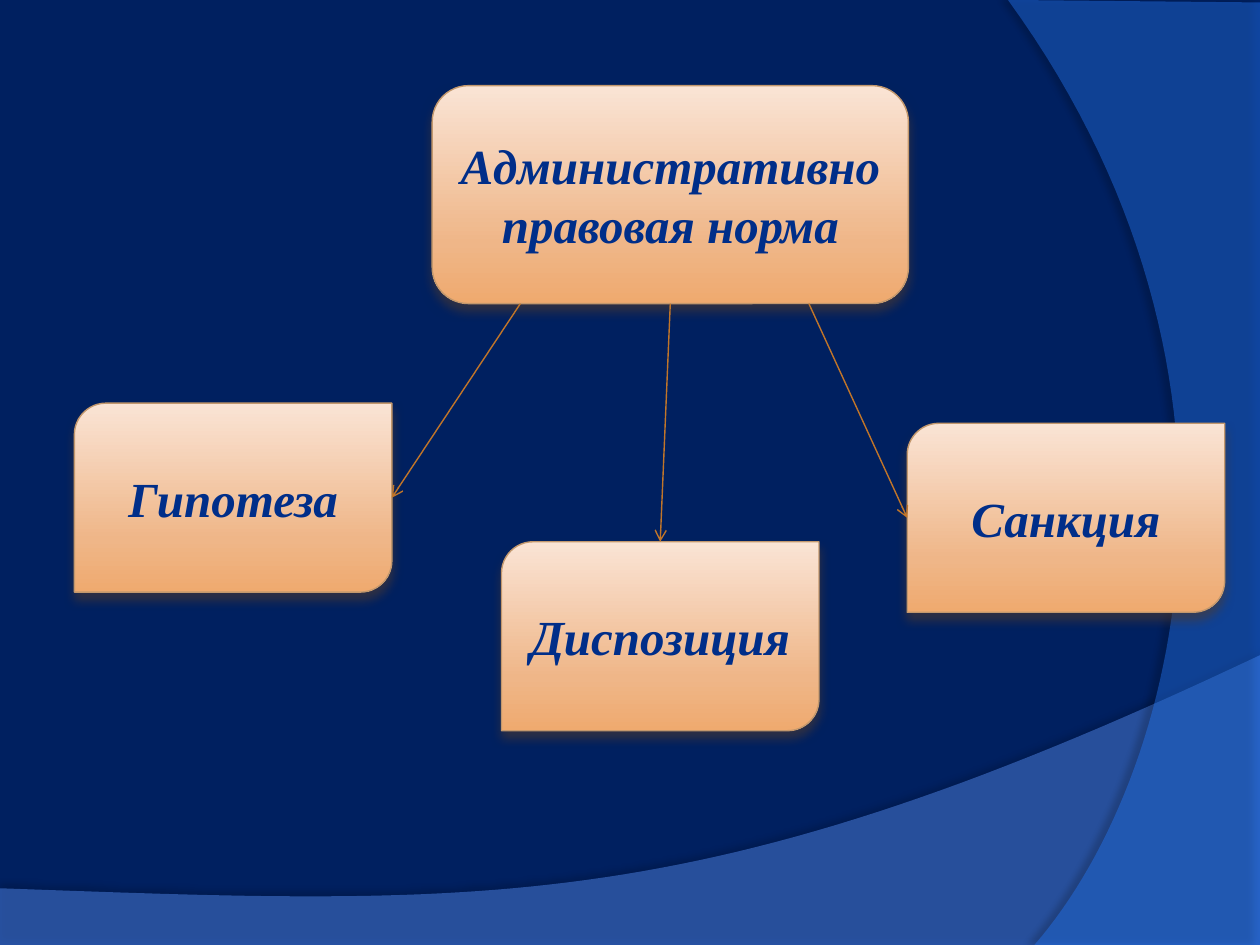
from lxml.etree import SubElement
from pptx import Presentation
from pptx.dml.color import RGBColor
from pptx.enum.shapes import MSO_CONNECTOR, MSO_SHAPE
from pptx.enum.text import MSO_ANCHOR, PP_ALIGN
from pptx.oxml.ns import qn
from pptx.util import Inches, Pt

NAVY = RGBColor(0x00, 0x20, 0x60)
LIGHT_WAVE = RGBColor(0x57, 0x90, 0xF7)
BRIGHT_WAVE = RGBColor(0x26, 0x7D, 0xFF)
TEXT_BLUE = RGBColor(0x00, 0x2E, 0x89)
BOX_LINE = RGBColor(0xC3, 0x98, 0x6D)
ARROW = RGBColor(0xC1, 0x75, 0x29)
BROWN = RGBColor(0x4E, 0x3B, 0x30)
BLACK = RGBColor(0x00, 0x00, 0x00)
BOX_STOPS = (
    (0, RGBColor(0xFA, 0xE4, 0xD5)),
    (72, RGBColor(0xEF, 0xB6, 0x88)),
    (100, RGBColor(0xEF, 0xAA, 0x6F)),
)
FONT = "Times New Roman"
LINE_WIDTH = Pt(0.79)
DIAG_SITES = {"right": 0, "left": 2, "top": 3}


def add_color(parent, color, alpha=None):
    clr = SubElement(parent, qn("a:srgbClr"), val=str(color))
    if alpha is not None:
        SubElement(clr, qn("a:alpha"), val=str(alpha * 1000))


def add_shadow(sp, color, alpha, blur, dist, angle):
    sp.shadow.inherit = False
    effects = sp._element.spPr.find(qn("a:effectLst"))
    shadow = SubElement(effects, qn("a:outerShdw"), blurRad=str(Pt(blur)),
                        dist=str(Pt(dist)), dir=str(angle * 60000), rotWithShape="0")
    add_color(shadow, color, alpha)


def fill_gradient(sp):
    sp.fill.gradient()
    sp.fill.gradient_angle = 270
    stops = sp._element.spPr.find(qn("a:gradFill")).find(qn("a:gsLst"))
    for stop in list(stops):
        stops.remove(stop)
    for pos, color in BOX_STOPS:
        add_color(SubElement(stops, qn("a:gs"), pos=str(pos * 1000)), color)


def curve(p0, p1, p2, p3, steps=60):
    points = []
    for i in range(steps + 1):
        t = i / steps
        u = 1 - t
        weights = (u ** 3, 3 * u * u * t, 3 * u * t * t, t ** 3)
        points.append(tuple(sum(w * p[axis] for w, p in zip(weights, (p0, p1, p2, p3)))
                            for axis in (0, 1)))
    return points


def add_wave(slide, points, color, alpha, shadow):
    points = [(Inches(x), Inches(y)) for x, y in points]
    builder = slide.shapes.build_freeform(*points[0])
    builder.add_line_segments(points[1:], close=True)
    sp = builder.convert_to_shape()
    sp.fill.solid()
    sp.fill.fore_color.rgb = color
    clr = sp._element.spPr.find(qn("a:solidFill"))[0]
    SubElement(clr, qn("a:alpha"), val=str(alpha * 1000))
    sp.line.fill.background()
    add_shadow(sp, BLACK, *shadow)


def add_background(slide):
    slide.background.fill.solid()
    slide.background.fill.fore_color.rgb = NAVY
    bottom = [(0, 7.51), (10, 7.51)]
    bottom += curve((10, 5.2), (5.59, 7.29), (3.91, 7.19), (0, 7.05))
    add_wave(slide, bottom, LIGHT_WAVE, 45, (35, 4, 3.5, 270))
    side = [(10, 0.02), (10, 7.5)]
    side += curve((8.21, 7.5), (9.35, 6.19), (10.18, 3), (8, 0))
    add_wave(slide, side, BRIGHT_WAVE, 40, (45, 4, 4, 180))


def add_box(slide, kind, text, left, top, width, height):
    sp = slide.shapes.add_shape(kind, Inches(left), Inches(top), Inches(width), Inches(height))
    fill_gradient(sp)
    sp.line.color.rgb = BOX_LINE
    sp.line.width = LINE_WIDTH
    add_shadow(sp, BROWN, 60, 6, 4, 90)
    tf = sp.text_frame
    tf.word_wrap = True
    tf.vertical_anchor = MSO_ANCHOR.MIDDLE
    p = tf.paragraphs[0]
    p.text = text
    p.alignment = PP_ALIGN.CENTER
    p.font.name = FONT
    p.font.size = Pt(28)
    p.font.bold = True
    p.font.italic = True
    p.font.color.rgb = TEXT_BLUE
    return sp


def add_arrow(slide, norm, start_x, part, side):
    end_x = part.left + {"left": 0, "top": part.width // 2, "right": part.width}[side]
    end_y = part.top + (0 if side == "top" else part.height // 2)
    line = slide.shapes.add_connector(MSO_CONNECTOR.STRAIGHT, start_x,
                                      norm.top + norm.height, end_x, end_y)
    if start_x == norm.left + norm.width // 2:
        line.begin_connect(norm, 2)
    line.end_connect(part, DIAG_SITES[side])
    line.end_x, line.end_y = end_x, end_y
    line.line.color.rgb = ARROW
    line.line.width = LINE_WIDTH
    SubElement(line.line._get_or_add_ln(), qn("a:tailEnd"), type="arrow")
    SubElement(line._element.spPr, qn("a:effectLst"))


def add_diagram(slide):
    norm = add_box(slide, MSO_SHAPE.ROUNDED_RECTANGLE, "Административно правовая норма",
                   3.43, 0.68, 3.78, 1.73)
    parts = (
        ("Гипотеза", 0.59, 3.2, Inches(4.13), "right"),
        ("Диспозиция", 3.98, 4.3, norm.left + norm.width // 2, "top"),
        ("Санкция", 7.2, 3.36, Inches(6.42), "left"),
    )
    for text, left, top, start_x, side in parts:
        part = add_box(slide, MSO_SHAPE.ROUND_2_DIAG_RECTANGLE, text, left, top, 2.52, 1.5)
        add_arrow(slide, norm, start_x, part, side)


def main():
    prs = Presentation()
    prs.slide_width, prs.slide_height = Inches(10), Inches(7.5)
    slide = prs.slides.add_slide(prs.slide_layouts[6])
    add_background(slide)
    add_diagram(slide)
    prs.save("out.pptx")


if __name__ == "__main__":
    main()
